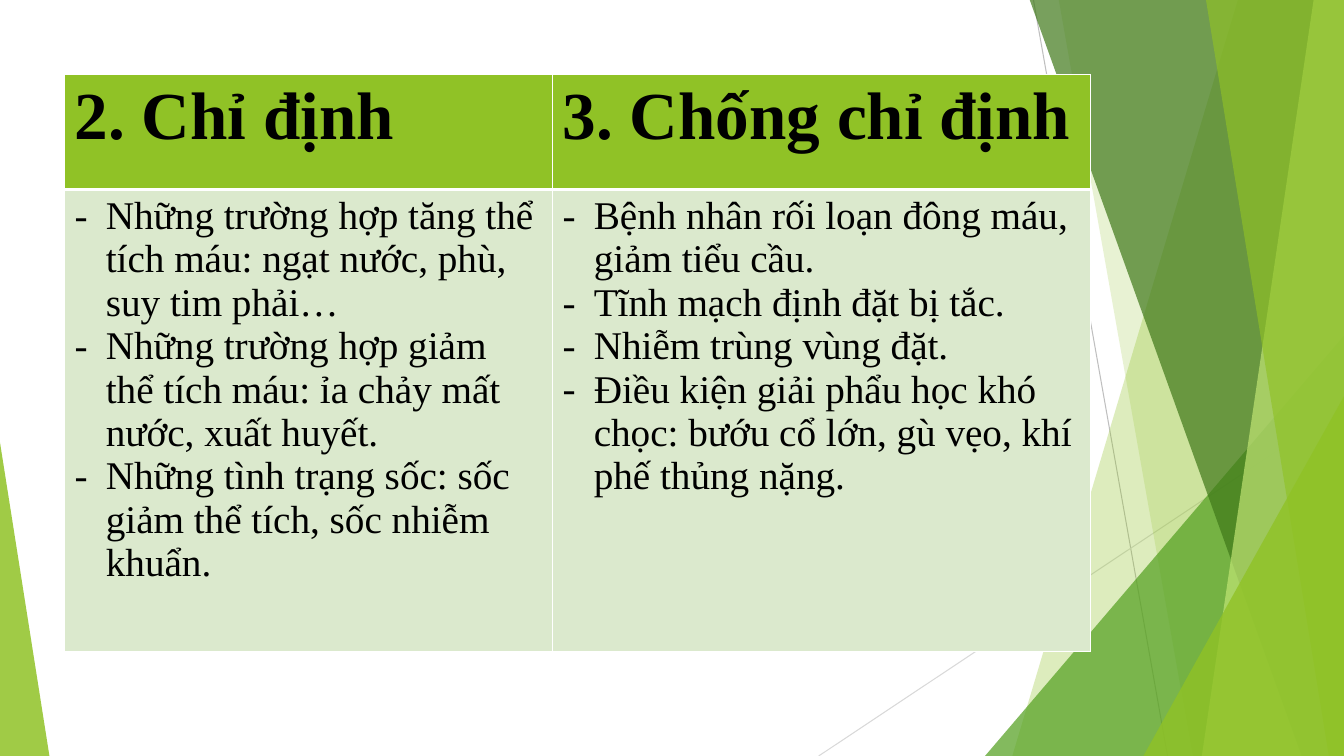
"""Build a slide comparing indications and contraindications in a two-column table."""
from dataclasses import dataclass

from lxml import etree
from pptx import Presentation
from pptx.dml.color import RGBColor
from pptx.enum.shapes import MSO_CONNECTOR, MSO_SHAPE
from pptx.oxml.ns import qn
from pptx.util import Inches, Pt

STRAIGHT = MSO_CONNECTOR.STRAIGHT
TRIANGLE = MSO_SHAPE.ISOSCELES_TRIANGLE
WIDTH, HEIGHT, TOP_EDGE = 13.33, 7.5, -0.01
BULLET_INDENT = 0.31


@dataclass(frozen=True)
class Theme:
    font: str = "Times New Roman"
    heading_size: int = 48
    body_size: int = 28
    text: str = "000000"
    lime: str = "90C226"
    pale_lime: str = "C0E474"
    green: str = "54A021"
    dark_green: str = "3F7819"
    body_fill: str = "DBE9CD"
    border: str = "FFFFFF"
    thin: float = 1
    thick: float = 3
    hairline: float = 0.75


@dataclass(frozen=True)
class Ray:
    start: tuple[float, float]
    end: tuple[float, float]
    color: str


@dataclass(frozen=True)
class Panel:
    """Band reaching the right edge, with a slanted left side."""
    top_x: float
    bottom_x: float
    color: str
    opacity: int


@dataclass(frozen=True)
class Corner:
    """Right triangle standing on the bottom edge."""
    left: float
    top: float
    width: float
    apex: float
    color: str
    opacity: int


@dataclass(frozen=True)
class Column:
    heading: str
    width: float
    points: tuple[str, ...]


THEME = Theme()
HEADING_FORMAT = {"name": THEME.font, "size": Pt(THEME.heading_size), "bold": True}
BODY_FORMAT = {"name": THEME.font, "size": Pt(THEME.body_size), "bold": False}
ROW_HEIGHTS = (1.14, 4.58)

DECORATION = (
    Ray((10.25, 0), (11.58, HEIGHT), "BFBFBF"),
    Ray((WIDTH, 4.03), (8.12, HEIGHT), "D9D9D9"),
    Panel(12.28, 10.04, THEME.lime, 30),
    Panel(10.5, 11.83, THEME.lime, 20),
    Corner(9.77, 3.33, 3.56, 1, THEME.green, 72),
    Panel(10.21, 12.91, THEME.dark_green, 70),
    Panel(13.03, 11.92, THEME.pale_lime, 70),
    Panel(11.96, 13.18, THEME.lime, 65),
    Corner(11.34, 3.93, 1.99, 1, THEME.lime, 80),
    Corner(0, 4.39, 0.49, 0, THEME.lime, 85),
)

COLUMNS = (
    Column("2. Chỉ định", 4.84, (
        "Những trường hợp tăng thể tích máu: ngạt nước, phù, suy tim phải…",
        "Những trường hợp giảm thể tích máu: ỉa chảy mất nước, xuất huyết.",
        "Những tình trạng sốc: sốc giảm thể tích, sốc nhiễm khuẩn.",
    )),
    Column("3. Chống chỉ định", 5.34, (
        "Bệnh nhân rối loạn đông máu, giảm tiểu cầu.",
        "Tĩnh mạch định đặt bị tắc.",
        "Nhiễm trùng vùng đặt.",
        "Điều kiện giải phẩu học khó chọc: bướu cổ lớn, gù vẹo, khí phế thủng nặng.",
    )),
)


def paint(shape, color: str, opacity: int) -> None:
    shape.shadow.inherit = False
    shape.line.fill.background()
    shape.fill.solid()
    shape.fill.fore_color.rgb = RGBColor.from_string(color)
    solid = shape.element.spPr.find(qn("a:solidFill"))
    etree.SubElement(solid[0], qn("a:alpha"), val=str(opacity * 1000))


def draw_ray(shapes, ray: Ray) -> None:
    ends = [Inches(value) for value in ray.start + ray.end]
    connector = shapes.add_connector(STRAIGHT, *ends)
    connector.line.color.rgb = RGBColor.from_string(ray.color)
    connector.line.width = Pt(THEME.hairline)
    etree.SubElement(connector.element.spPr, qn("a:effectLst"))


def draw_panel(shapes, panel: Panel) -> None:
    outline = ((WIDTH, TOP_EDGE), (WIDTH, HEIGHT), (panel.bottom_x, HEIGHT))
    builder = shapes.build_freeform(Inches(panel.top_x), Inches(TOP_EDGE))
    builder.add_line_segments([(Inches(x), Inches(y)) for x, y in outline])
    paint(builder.convert_to_shape(), panel.color, panel.opacity)


def draw_corner(shapes, corner: Corner) -> None:
    box = (corner.left, corner.top, corner.width, HEIGHT - corner.top)
    triangle = shapes.add_shape(TRIANGLE, *map(Inches, box))
    triangle.adjustments[0] = corner.apex
    paint(triangle, corner.color, corner.opacity)


def style_cell(cell, fill: str, thick_edge: str) -> None:
    cell.fill.solid()
    cell.fill.fore_color.rgb = RGBColor.from_string(fill)
    properties = cell._tc.get_or_add_tcPr()
    for position, edge in enumerate(("lnL", "lnR", "lnT", "lnB")):
        points = THEME.thick if edge == thick_edge else THEME.thin
        border = etree.Element(qn(f"a:{edge}"), w=str(Pt(points)))
        solid = etree.SubElement(border, qn("a:solidFill"))
        etree.SubElement(solid, qn("a:srgbClr"), val=THEME.border)
        properties.insert(position, border)


def write_lines(cell, lines: tuple[str, ...], font_format: dict, bulleted: bool) -> None:
    cell.text_frame.text = "\n".join(lines)
    for paragraph in cell.text_frame.paragraphs:
        font = paragraph.runs[0].font
        for attribute, value in font_format.items():
            setattr(font, attribute, value)
        font.color.rgb = RGBColor.from_string(THEME.text)
        if bulleted:
            properties = paragraph._p.get_or_add_pPr()
            properties.set("marL", str(Inches(BULLET_INDENT)))
            properties.set("indent", str(-Inches(BULLET_INDENT)))
            etree.SubElement(properties, qn("a:buFont"), typeface=THEME.font)
            etree.SubElement(properties, qn("a:buChar"), char="-")


def draw_comparison(shapes, columns: tuple[Column, ...]) -> None:
    size = (sum(column.width for column in columns), sum(ROW_HEIGHTS))
    frame = shapes.add_table(len(ROW_HEIGHTS), len(columns), *map(Inches, (0.64, 0.74, *size)))
    comparison = frame.table
    for row, height in zip(comparison.rows, ROW_HEIGHTS):
        row.height = Inches(height)
    for index, column in enumerate(columns):
        comparison.columns[index].width = Inches(column.width)
        heading, body = (comparison.cell(row, index) for row in range(2))
        style_cell(heading, THEME.lime, "lnB")
        style_cell(body, THEME.body_fill, "lnT")
        write_lines(heading, (column.heading,), HEADING_FORMAT, bulleted=False)
        write_lines(body, column.points, BODY_FORMAT, bulleted=True)


def main() -> None:
    presentation = Presentation()
    presentation.slide_width = Inches(WIDTH)
    presentation.slide_height = Inches(HEIGHT)
    shapes = presentation.slides.add_slide(presentation.slide_layouts[6]).shapes
    painters = {Ray: draw_ray, Panel: draw_panel, Corner: draw_corner}
    for part in DECORATION:
        painters[type(part)](shapes, part)
    draw_comparison(shapes, COLUMNS)
    presentation.save("out.pptx")


if __name__ == "__main__":
    main()
